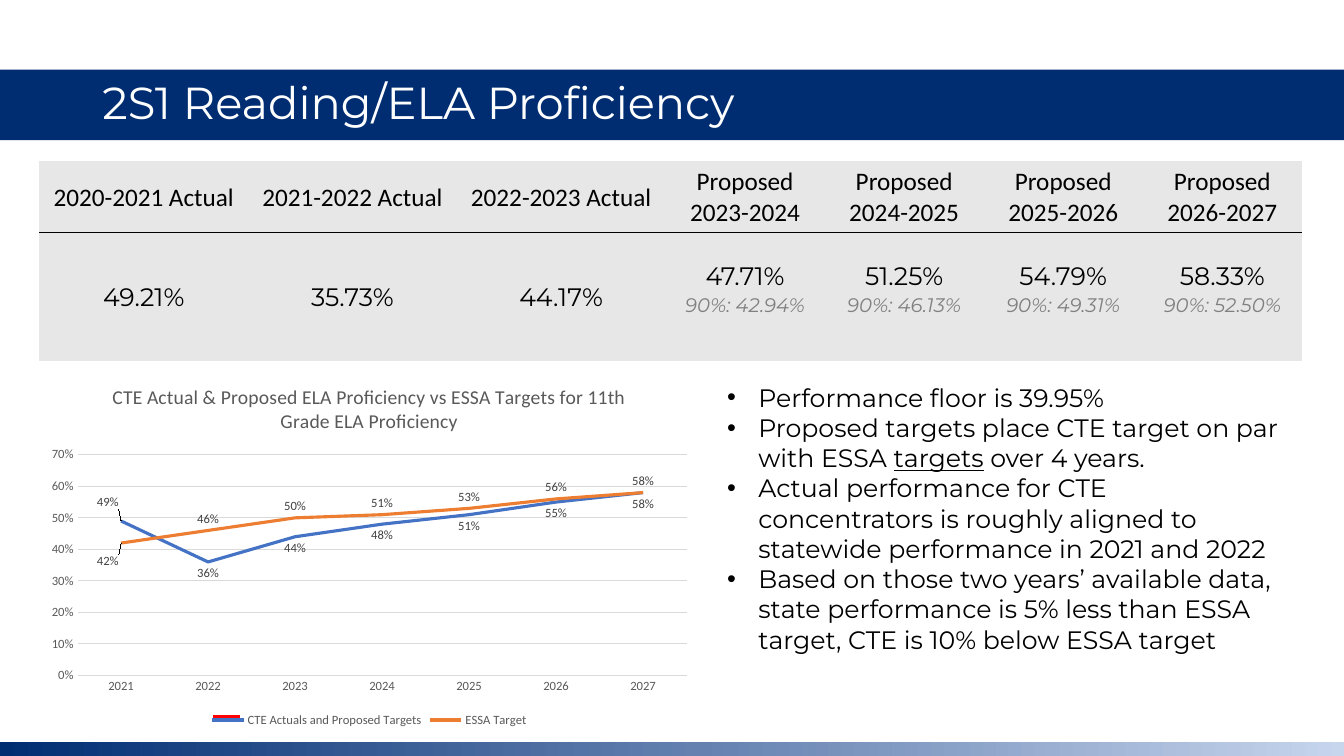
from copy import deepcopy
from pptx import Presentation, util as u
from pptx.chart.data import CategoryChartData
from pptx.dml.color import RGBColor
from pptx.enum import chart as ch, shapes, text
from pptx.oxml import parse_xml
from pptx.oxml.ns import nsdecls, qn

HUE = {"navy": "002D72", "mid": "6481B0", "pale": "C7D5ED", "white": "FFFFFF",
       "black": "000000", "cell": "E7E7E7", "note": "808080", "grid": "D9D9D9",
       "axis": "595959", "label": "404040", "blue": "4472C4",
       "orange": "ED7D31", "red": "FF0000"}
deck = Presentation()
deck.slide_width, deck.slide_height = u.Inches(13.33), u.Inches(7.5)
W, H = deck.slide_width / 100, deck.slide_height / 100
slide = deck.slides.add_slide(deck.slide_layouts[5])


def box(left, top, wide, high):
    return int(left * W), int(top * H), int(wide * W), int(high * H)


def style(font, size, hue, face="Calibri"):
    font.size, font.name = u.Pt(size), face
    font.color.rgb = RGBColor.from_string(HUE[hue])


band = slide.shapes.add_shape(shapes.MSO_SHAPE.RECTANGLE, *box(0, 9.2, 100, 9.33))
foot = slide.shapes.add_shape(shapes.MSO_SHAPE.RECTANGLE, *box(0, 98.13, 100, 1.87))
for part in (band, foot):
    part.shadow.inherit = False
    part.line.fill.background()
band.fill.solid()
band.fill.fore_color.rgb = RGBColor.from_string(HUE["navy"])
foot.fill.gradient()
foot.fill.gradient_angle = 0
stops = foot.element.find(".//" + qn("a:gsLst"))
stops.append(deepcopy(stops[-1]))
for stop, (spot, hue) in zip(foot.fill.gradient_stops,
                             [(0, "navy"), (0.52, "mid"), (1, "pale")]):
    stop.position = spot
    stop.color.rgb = RGBColor.from_string(HUE[hue])

title = slide.shapes.title
foot.element.addnext(title.element)
title.left, title.top, title.width, title.height = box(6.87, 9.2, 86.27, 9.33)
frame = title.text_frame
frame.auto_size = text.MSO_AUTO_SIZE.NONE
frame.vertical_anchor = text.MSO_ANCHOR.MIDDLE
para = frame.paragraphs[0]
para.alignment, para.line_spacing = text.PP_ALIGN.LEFT, 0.9
run = para.add_run()
run.text = "2S1 Reading/ELA Proficiency"
style(run.font, 32, "white", "Montserrat")

heads = [["2020-2021 Actual"], ["2021-2022 Actual"], ["2022-2023 Actual"],
         ["Proposed", "2023-2024"], ["Proposed", "2024-2025"],
         ["Proposed", "2025-2026"], ["Proposed", "2026-2027"]]
rates = [49.21, 35.73, 44.17, 47.71, 51.25, 54.79, 58.33]
notes = ["", "", "", "90%: 42.94%", "90%: 46.13%", "90%: 49.31%", "90%: 52.50%"]
rule = f'<a:solidFill><a:srgbClr val="{HUE["black"]}"/></a:solidFill>'
bare = "<a:noFill/>"
edges = [{"lnB": rule}, {"lnT": rule, "lnB": bare}, {"lnT": bare, "lnB": bare}]
table = slide.shapes.add_table(3, 7, *box(2.93, 21.33, 94, 26.4)).table
table.first_row = table.horz_banding = False
plain = "{2D5ABB26-0587-4C30-8999-92F81FD0307C}"
table._tbl.tblPr.find(qn("a:tableStyleId")).text = plain
for row, high in zip(table.rows, (9.47, 7.87, 9.07)):
    row.height = int(high * H)
for c, col in enumerate(table.columns):
    col.width = int((15.53 if c < 3 else 11.84) * W)
    if c < 3:
        table.cell(1, c).merge(table.cell(2, c))
    mid, low = text.MSO_ANCHOR.MIDDLE, text.MSO_ANCHOR.BOTTOM
    rows = [(heads[c], 18, "black", "Calibri", mid),
            ([f"{rates[c]:.2f}%"], 18, "black", "Montserrat", mid if c < 3 else low),
            ([notes[c]], 14, "note", "Montserrat", text.MSO_ANCHOR.TOP)]
    for r, (lines, size, hue, face, anchor) in enumerate(rows):
        cell = table.cell(r, c)
        cell.fill.solid()
        cell.fill.fore_color.rgb = RGBColor.from_string(HUE["cell"])
        cell.margin_left = cell.margin_right = cell.margin_top = u.Inches(0.01)
        cell.margin_bottom = 0
        cell.vertical_anchor = anchor
        para = cell.text_frame.paragraphs[0]
        para.alignment = text.PP_ALIGN.CENTER
        for n, line in enumerate(lines):
            if not line:
                continue
            if n:
                para.add_line_break()
            run = para.add_run()
            run.text = line
            style(run.font, size, hue, face)
            if r == 2:
                run.font.italic = True
        for n, (side, ink) in enumerate(edges[r].items()):
            cell._tc.get_or_add_tcPr().insert(n, parse_xml(
                f'<a:{side} {nsdecls("a")} w="12700">{ink}</a:{side}>'))

points = [
    ["Performance floor is 39.95%"],
    ["Proposed targets place CTE target on par with ESSA ", "targets", " over 4 years."],
    ["Actual performance for CTE concentrators is roughly aligned to "
     "statewide performance in 2021 and 2022"],
    ["Based on those two years’ available data, state performance is 5% less "
     "than ESSA target, CTE is 10% below ESSA target"]]
frame = slide.shapes.add_textbox(*box(53.36, 49.87, 42.7, 37.73)).text_frame
frame.word_wrap = True
for n, point in enumerate(points):
    para = frame.add_paragraph() if n else frame.paragraphs[0]
    props = para._p.get_or_add_pPr()
    props.set("marL", str(u.Inches(0.31)))
    props.set("indent", str(-u.Inches(0.31)))
    props.append(parse_xml(f'<a:buFont {nsdecls("a")} typeface="Arial"/>'))
    props.append(parse_xml(f'<a:buChar {nsdecls("a")} char="•"/>'))
    for words in point:
        run = para.add_run()
        run.text = words
        style(run.font, 18, "black", "Montserrat")
        if words == "targets":
            run.font.underline = True

data = CategoryChartData(number_format="0%")
data.categories = [str(year) for year in range(2021, 2028)]
data.add_series("CTE Actuals and Proposed Targets", [round(v / 100, 2) for v in rates])
data.add_series("ESSA Target", [0.42, 0.46, 0.5, 0.51, 0.53, 0.56, 0.58])
chart = slide.shapes.add_chart(ch.XL_CHART_TYPE.LINE,
                               *box(2.87, 48.6, 49.2, 48.16), data).chart
style(chart.font, 10, "black")
chart.has_title = True
run = chart.chart_title.text_frame.paragraphs[0].add_run()
run.text = "CTE Actual & Proposed ELA Proficiency vs ESSA Targets for 11th Grade ELA Proficiency"
style(run.font, 14, "axis")
run.font.bold = False
chart.has_legend = True
chart.legend.position = ch.XL_LEGEND_POSITION.BOTTOM
chart.legend.include_in_layout = False
style(chart.legend.font, 9, "axis")
years, scale = chart.category_axis, chart.value_axis
for axis in (years, scale):
    axis.major_tick_mark = axis.minor_tick_mark = ch.XL_TICK_MARK.NONE
    style(axis.tick_labels.font, 9, "axis")
scale.minimum_scale, scale.maximum_scale, scale.major_unit = 0, 0.7, 0.1
scale.tick_labels.number_format = "0%"
scale.tick_labels.number_format_is_linked = False
scale.format.line.fill.background()
for line in (years.format.line, scale.major_gridlines.format.line):
    line.color.rgb = RGBColor.from_string(HUE["grid"])
    line.width = u.Pt(0.75)
plot = chart.plots[0]
plot.vary_by_categories = False
above, below = ch.XL_LABEL_POSITION.ABOVE, ch.XL_LABEL_POSITION.BELOW
for line, hue, rest, first, shift in zip(plot.series, ("blue", "orange"), (below, above),
                                         (above, below), (-0.02, 0.02)):
    line.smooth = False
    line.marker.style = ch.XL_MARKER_STYLE.NONE
    line.format.line.color.rgb = RGBColor.from_string(HUE[hue])
    line.format.line.width = u.Pt(2.25)
    tags = line.data_labels
    tags.show_value, tags.position = True, rest
    tags.number_format, tags.number_format_is_linked = "0%", False
    style(tags.font, 9, "label")
    tag = line.points[0].data_label
    style(tag.font, 9, "label")
    tag.position = first
    line._element.find(".//" + qn("c:dLbl")).insert(1, parse_xml(
        f'<c:layout {nsdecls("c")}><c:manualLayout><c:x val="-0.02"/>'
        f'<c:y val="{shift}"/></c:manualLayout></c:layout>'))

key = slide.shapes.add_connector(shapes.MSO_CONNECTOR.STRAIGHT, int(15.83 * W),
                                 int(94.8 * H), int(17.85 * W), int(94.8 * H))
key.line.color.rgb = RGBColor.from_string(HUE["red"])
key.line.width = u.Pt(2.25)
key.element.spPr.append(parse_xml(f'<a:effectLst {nsdecls("a")}/>'))
deck.save("out.pptx")
